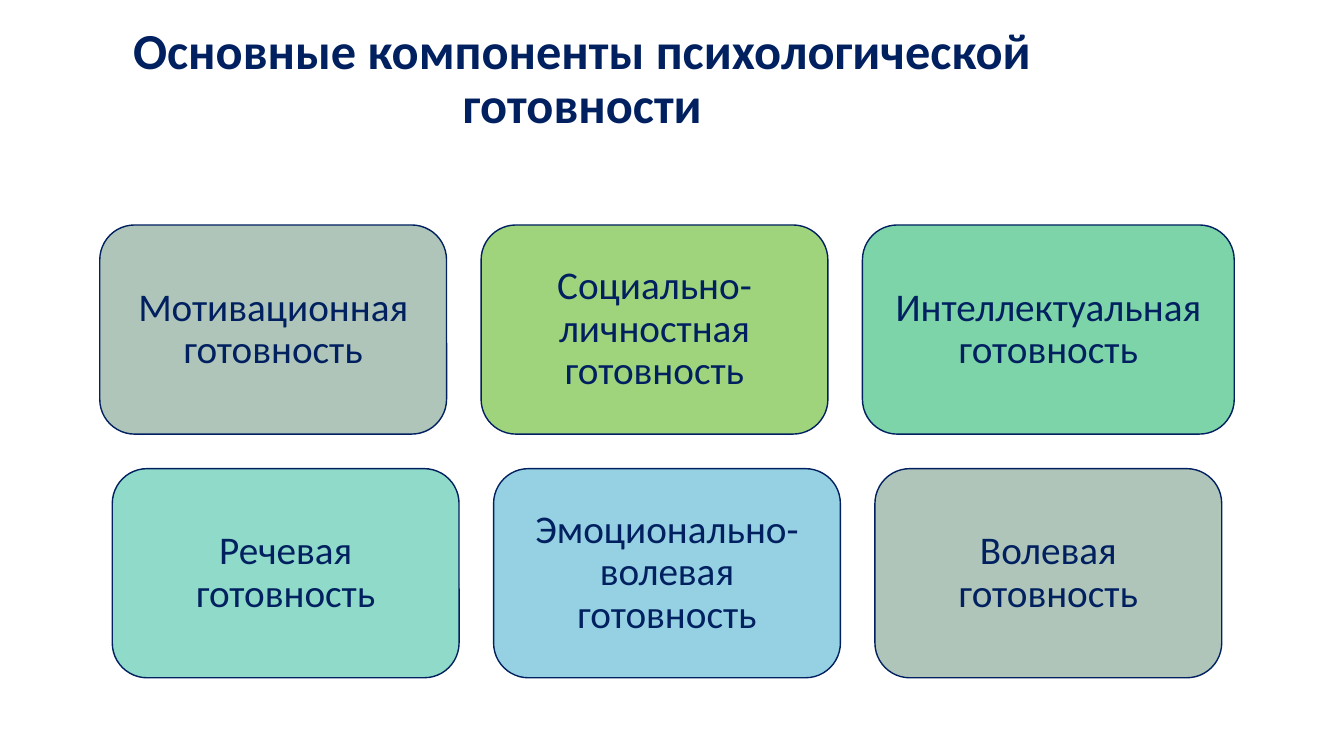
from pptx import Presentation
from pptx.dml.color import RGBColor
from pptx.enum.shapes import MSO_SHAPE
from pptx.enum.text import MSO_ANCHOR, PP_ALIGN
from pptx.util import Cm, Pt

ROUNDED = MSO_SHAPE.ROUNDED_RECTANGLE
MIDDLE = MSO_ANCHOR.MIDDLE
CENTER = PP_ALIGN.CENTER
NAVY = "002060"


def color(hex_value):
    return RGBColor.from_string(hex_value)


def write(shape, text, size, bold=False, inset=0.25):
    """Fill the shape with centred navy text; inset is in centimetres."""
    frame = shape.text_frame
    frame.word_wrap = True
    frame.vertical_anchor = MIDDLE
    frame.margin_left = frame.margin_right = Cm(inset)
    frame.margin_top = frame.margin_bottom = Cm(inset)
    paragraph = frame.paragraphs[0]
    paragraph.text = text
    paragraph.alignment = CENTER
    paragraph.line_spacing = 0.9
    font = paragraph.font
    font.name = "Calibri"
    font.size = Pt(size)
    font.bold = bold
    font.color.rgb = color(NAVY)


prs = Presentation()
prs.slide_width = Cm(33.87)
prs.slide_height = Cm(19.05)
slide = prs.slides.add_slide(prs.slide_layouts[6])

title = slide.shapes.add_textbox(Cm(0.3), Cm(0.18), Cm(28.75), Cm(3.68))
write(title, "Основные компоненты психологической готовности", 36, bold=True)

# Each component: text, fill, card width in centimetres
component_rows = [
    [
        ("Мотивационная готовность", "AFC5B9", 8.74),
        ("Социально-личностная готовность", "9FD47D", 8.74),
        ("Интеллектуальная готовность", "7DD4A9", 9.37),
    ],
    [
        ("Речевая готовность", "8FDAC8", 8.74),
        ("Эмоционально-волевая готовность", "95D1E2", 8.74),
        ("Волевая готовность", "AFC5B9", 8.74),
    ],
]
rows_center = 16.81
card_height = 5.27
gap = 0.87

top = 5.67
for components in component_rows:
    row_width = sum(width for _, _, width in components) + gap * (len(components) - 1)
    left = rows_center - row_width / 2
    for text, fill, width in components:
        card = slide.shapes.add_shape(ROUNDED, Cm(left), Cm(top), Cm(width), Cm(card_height))
        card.shadow.inherit = False
        card.fill.solid()
        card.fill.fore_color.rgb = color(fill)
        card.line.color.rgb = color(NAVY)
        card.line.width = Pt(1)
        write(card, text, 28, inset=0.3)
        left += width + gap
    top += card_height + gap

prs.save("out.pptx")
